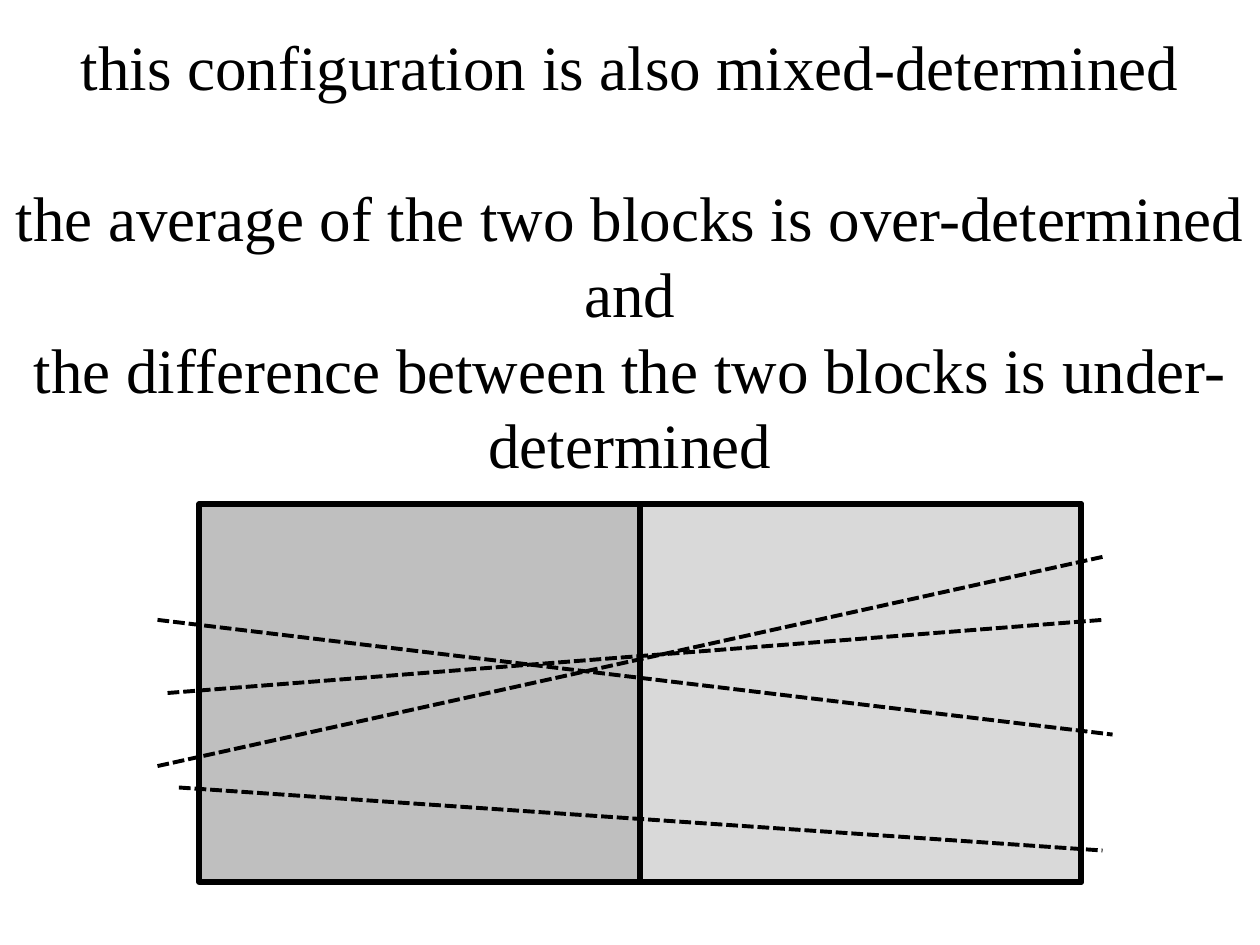
from pptx import Presentation
from pptx.dml.color import RGBColor
from pptx.enum.dml import MSO_LINE
from pptx.enum.shapes import MSO_CONNECTOR, MSO_SHAPE
from pptx.enum.text import MSO_ANCHOR, MSO_AUTO_SIZE, PP_ALIGN
from pptx.oxml.ns import qn
from pptx.util import Inches, Pt
from lxml.etree import SubElement

COLORS = {"ink": "000000", "left": "BFBFBF", "right": "D9D9D9"}
FONT = "Times New Roman"
PITCH = 43.2  # line height of the text in points

# Ray ends: x1, y1, x2, y2
RAYS = [
    (1.25, 4.92, 8.83, 5.83),
    (1.33, 5.5, 8.75, 4.92),
    (1.25, 6.08, 8.75, 4.42),
    (1.42, 6.25, 8.75, 6.75),
]


def color(name):
    return RGBColor.from_string(COLORS[name])


def add_text(para, text, size=36, ink="ink", before=0):
    para.alignment = PP_ALIGN.CENTER
    para.line_spacing = Pt(PITCH)
    para.space_before = Pt(before)
    run = para.add_run()
    run.text = text
    run.font.name = FONT
    run.font.size = Pt(size)
    run.font.color.rgb = color(ink)


def set_title(slide, lines):
    title = slide.shapes.title
    title.left, title.top = Inches(0), Inches(0.17)
    title.width, title.height = Inches(10), Inches(4.64)
    frame = title.text_frame
    frame.word_wrap = True
    frame.auto_size = MSO_AUTO_SIZE.SHAPE_TO_FIT_TEXT
    frame.vertical_anchor = MSO_ANCHOR.TOP
    for i, (text, gap) in enumerate(lines):
        para = frame.add_paragraph() if i else frame.paragraphs[0]
        add_text(para, text, before=gap)


def add_block(slide, x, width, fill):
    block = slide.shapes.add_shape(
        MSO_SHAPE.RECTANGLE, Inches(x), Inches(4), Inches(width), Inches(3))
    block.shadow.inherit = False
    block.fill.solid()
    block.fill.fore_color.rgb = color(fill)
    block.line.color.rgb = color("ink")
    block.line.width = Pt(3)


def add_ray(slide, ends):
    ray = slide.shapes.add_connector(
        MSO_CONNECTOR.STRAIGHT, *[Inches(v) for v in ends])
    ray.line.color.rgb = color("ink")
    ray.line.width = Pt(2.25)
    ray.line.dash_style = MSO_LINE.SQUARE_DOT
    SubElement(ray._element.spPr, qn("a:effectLst"))


def main():
    prs = Presentation()
    prs.slide_width, prs.slide_height = Inches(10), Inches(7.5)
    slide = prs.slides.add_slide(prs.slide_layouts[5])

    # Statement, with one line of space after its opening
    set_title(slide, [
        ("this configuration is also mixed-determined", 0),
        ("the average of the two blocks is over-determined", PITCH),
        ("and", 0),
        ("the difference between the two blocks is under-determined", 0),
    ])

    # Whole body, with its right half laid on top
    add_block(slide, 1.58, 7, "left")
    add_block(slide, 5.08, 3.5, "right")

    # Rays through both blocks
    for ends in RAYS:
        add_ray(slide, ends)

    prs.save("out.pptx")


if __name__ == "__main__":
    main()
